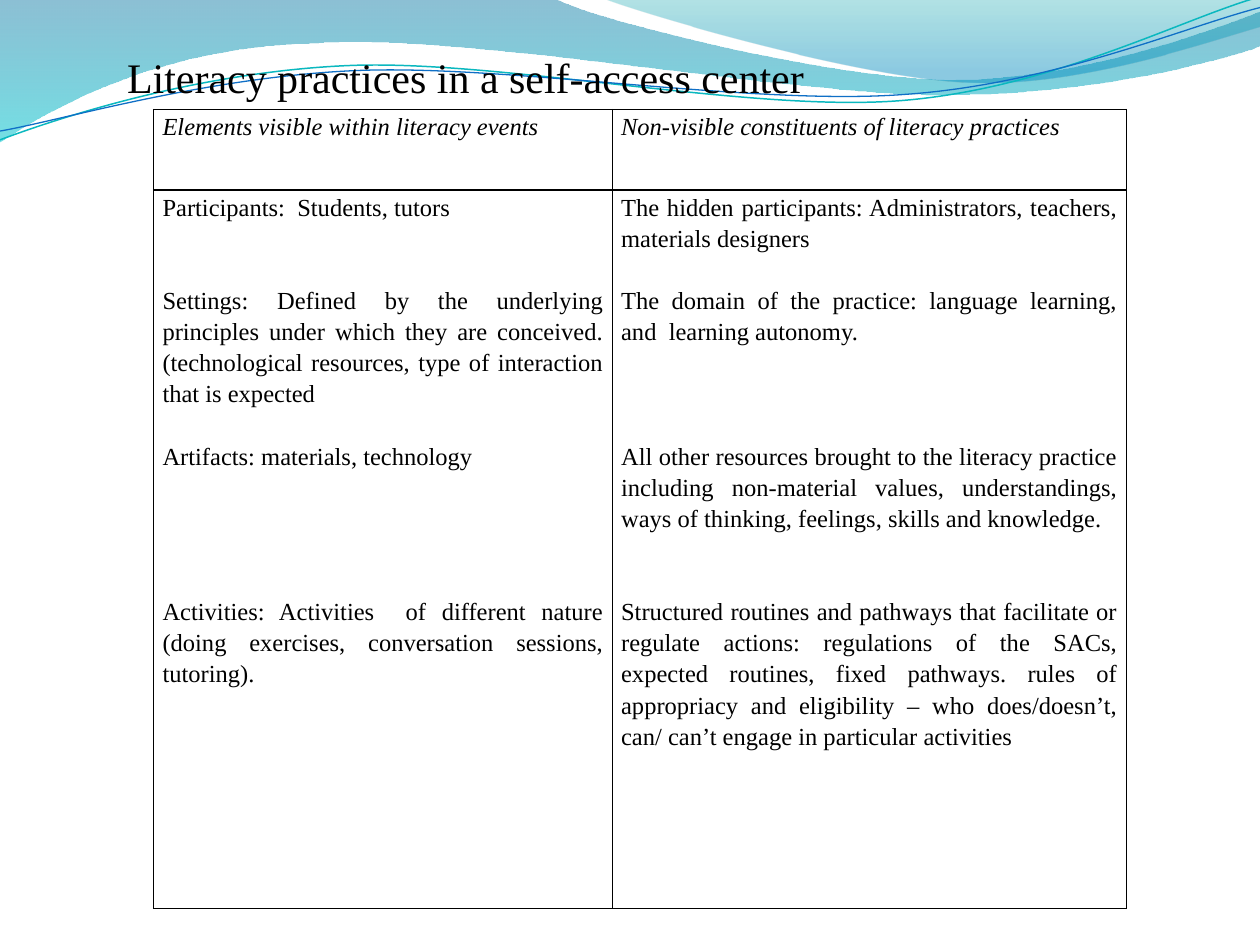
"""Build the slide on literacy practices in a self-access center."""
from math import cos, radians, sin
from lxml import etree
from pptx import Presentation
from pptx.dml.color import RGBColor
from pptx.enum.text import MSO_ANCHOR, MSO_AUTO_SIZE, PP_ALIGN
from pptx.oxml.ns import qn
from pptx.util import Inches, Pt

MIDDLE = MSO_ANCHOR.MIDDLE
GROW = MSO_AUTO_SIZE.SHAPE_TO_FIT_TEXT
JUSTIFY = PP_ALIGN.JUSTIFY
FONT = "Times New Roman"
LINE = 17.8
TILT = 2.7
COLORS = {
    "black": "000000", "white": "FFFFFF", "blue": "0074A1", "aqua": "00C6CF",
    "teal": "00A1A9", "sky": "008BBF", "cyan": "0AB8BF", "navy": "0F6FC6",
}


def color(name):
    return RGBColor.from_string(COLORS[name])


def draw(parts, close, tilt=0):
    """Draw a path of points and cubic curves, tilted counterclockwise."""
    dots = []
    for part in parts:
        for x, y in zip(part[::2], part[1::2]):
            dx, dy, turn = x - 4.99, y - 0.58, radians(tilt)
            dots.append((Inches(4.99 + dx * cos(turn) - dy * sin(turn)),
                         Inches(0.58 + dx * sin(turn) + dy * cos(turn))))
    pen = slide.shapes.build_freeform(*dots[0], scale=1.0)
    pen.add_line_segments(dots[1:], close=close)
    shape = pen.convert_to_shape()
    shape.shadow.inherit = False
    shape.rotation = -tilt
    steps = iter(list(shape._element.iter(qn("a:lnTo"))))
    for part in parts[1:]:
        first = next(steps)
        if len(part) == 6:
            first.tag = qn("a:cubicBezTo")
            for step in (next(steps), next(steps)):
                first.append(step[0])
                step.getparent().remove(step)
    return shape


prs = Presentation()
prs.slide_width, prs.slide_height = Inches(10), Inches(7.5)
slide = prs.slides.add_slide(prs.slide_layouts[6])

waves = [
    ([(0, 0), (4.4, -0.01), (4.76, 0.17, 6.64, 0.63, 7.58, 0.63),
      (8.53, 0.63, 9.58, 0.26, 10, 0.09), (10.01, 0.36),
      (9.83, 0.44, 8.7, 0.76, 7.46, 0.75), (6.22, 0.75, 3.82, 0.28, 2.57, 0.34),
      (1.29, 0.36, 0.46, 0.83, -0.01, 1.13)],
     [(0, "blue", 45), (1, "aqua", 55)]),
    ([(4.79, -0.01), (5.09, 0.11, 6.82, 0.62, 7.69, 0.65),
      (8.56, 0.69, 9.61, 0.32, 10, 0.21), (10, 0)],
     [(0, "teal", 30), (0.8, "sky", 45)]),
]
for parts, stops in waves:
    wave = draw(parts, True)
    wave.line.fill.background()
    wave.fill.gradient()
    wave.fill.gradient_angle = 270
    for stop, (pos, name, _) in zip(wave.fill.gradient_stops, stops):
        stop.position = pos
        stop.color.rgb = color(name)
    for node, (_, _, alpha) in zip(wave._element.iter(qn("a:srgbClr")), stops):
        etree.SubElement(node, qn("a:alpha"), val=str(alpha * 1000))

curves = [
    ([(0, 1.11), (0.48, 0.93, 1.58, 0.57, 2.77, 0.52),
      (3.95, 0.47, 5.93, 0.89, 7.13, 0.8), (8.33, 0.71, 9.38, 0.15, 9.98, -0.02)],
     "cyan", 0.85),
    ([(0, 1.04), (0.47, 0.96, 1.64, 0.61, 2.83, 0.56),
      (4.03, 0.51, 5.97, 0.84, 7.17, 0.75), (8.36, 0.67, 9.41, 0.21, 10, 0.06)],
     "navy", 0.75),
]
for parts, name, width in curves:
    curve = draw(parts, False, TILT)
    curve.fill.background()
    curve.line.color.rgb = color(name)
    curve.line.width = Pt(width)

rows = [
    [[(0, "Elements visible within literacy events")],
     [(0, "Non-visible constituents of literacy practices")]],
    [[(0, "Participants:  Students, tutors"),
      (2, "Settings: Defined by the underlying principles under which they are "
          "conceived. (technological resources, type of interaction that is expected"),
      (1, "Artifacts: materials, technology"),
      (4, "Activities: Activities  of different nature (doing exercises, "
          "conversation sessions, tutoring).")],
     [(0, "The hidden participants: Administrators, teachers, materials designers"),
      (1, "The domain of the practice: language learning, and  learning autonomy."),
      (3, "All other resources brought to the literacy practice including "
          "non-material values, understandings, ways of thinking, feelings, "
          "skills and knowledge."),
      (2, "Structured routines and pathways that facilitate or regulate actions: "
          "regulations of the SACs, expected routines, fixed pathways. rules of "
          "appropriacy and eligibility – who does/doesn’t, can/ can’t engage in "
          "particular activities")]],
]
table = slide.shapes.add_table(
    2, 2, Inches(1.22), Inches(0.87), Inches(7.72), Inches(6.34)).table
table.first_row = table.horz_banding = False
for col, width in zip(table.columns, (3.64, 4.08)):
    col.width = Inches(width)
for row, height in zip(table.rows, (0.64, 5.7)):
    row.height = Inches(height)
for r, row in enumerate(rows):
    for c, paras in enumerate(row):
        cell = table.cell(r, c)
        cell.margin_left = cell.margin_right = Inches(0.07)
        cell.margin_top = cell.margin_bottom = 0
        for side in ("lnL", "lnR", "lnT", "lnB"):
            edge = etree.SubElement(
                cell._tc.get_or_add_tcPr(), qn(f"a:{side}"), w=str(Pt(1)))
            fill = etree.SubElement(edge, qn("a:solidFill"))
            etree.SubElement(fill, qn("a:srgbClr"), val=COLORS["black"])
        if r == 0:
            cell.fill.solid()
            cell.fill.fore_color.rgb = color("white")
        else:
            cell.fill.background()
        frame = cell.text_frame
        for i, (gap, text) in enumerate(paras):
            para = frame.add_paragraph() if i else frame.paragraphs[0]
            para.text = text
            para.alignment = JUSTIFY
            para.line_spacing = 1.15
            para.space_before = Pt(gap * LINE)
            font = para.runs[0].font
            font.name, font.size, font.italic = FONT, Pt(14), r == 0
            font.color.rgb = color("black")

title = slide.shapes.add_textbox(Inches(0.91), Inches(0.36), Inches(7.09), Inches(0.5))
frame = title.text_frame
frame.word_wrap = True
frame.auto_size = GROW
frame.vertical_anchor = MIDDLE
frame.text = "Literacy practices in a self-access center"
font = frame.paragraphs[0].runs[0].font
font.name, font.size = FONT, Pt(24)
font.color.rgb = color("black")

prs.save("out.pptx")
